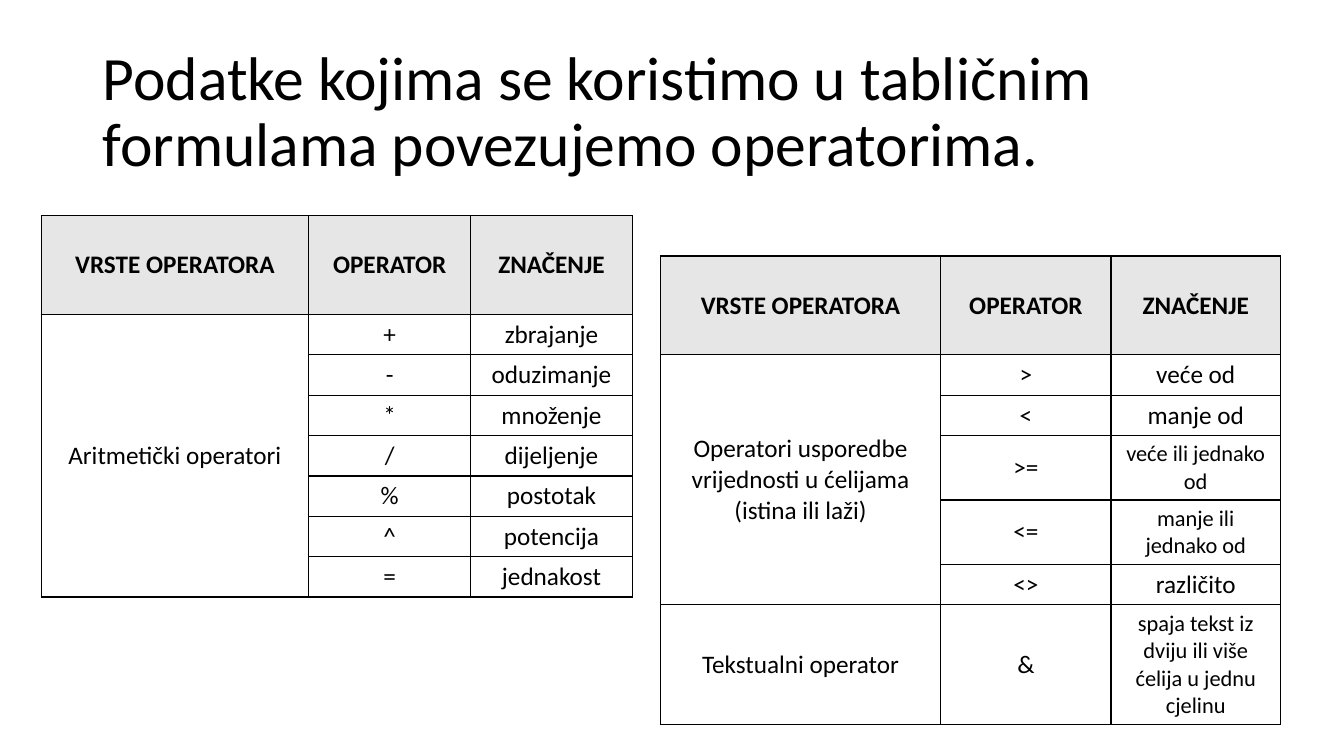
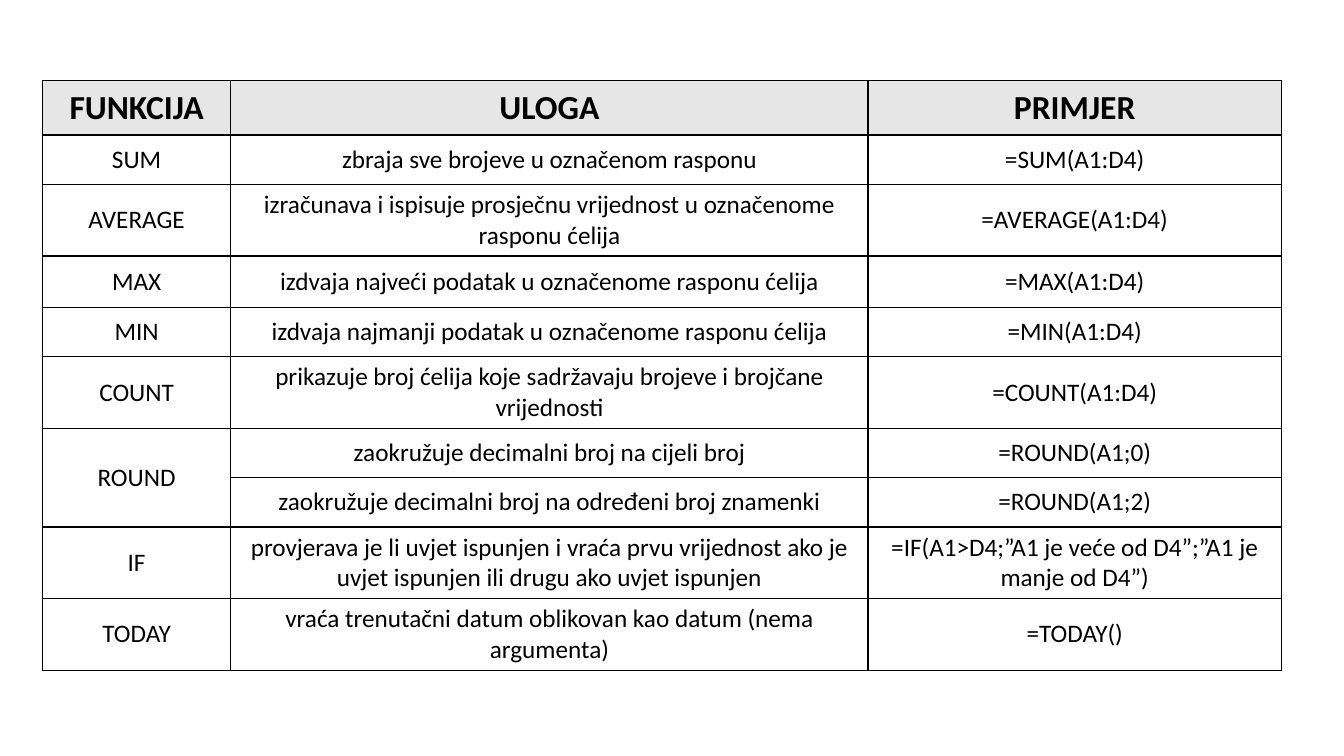
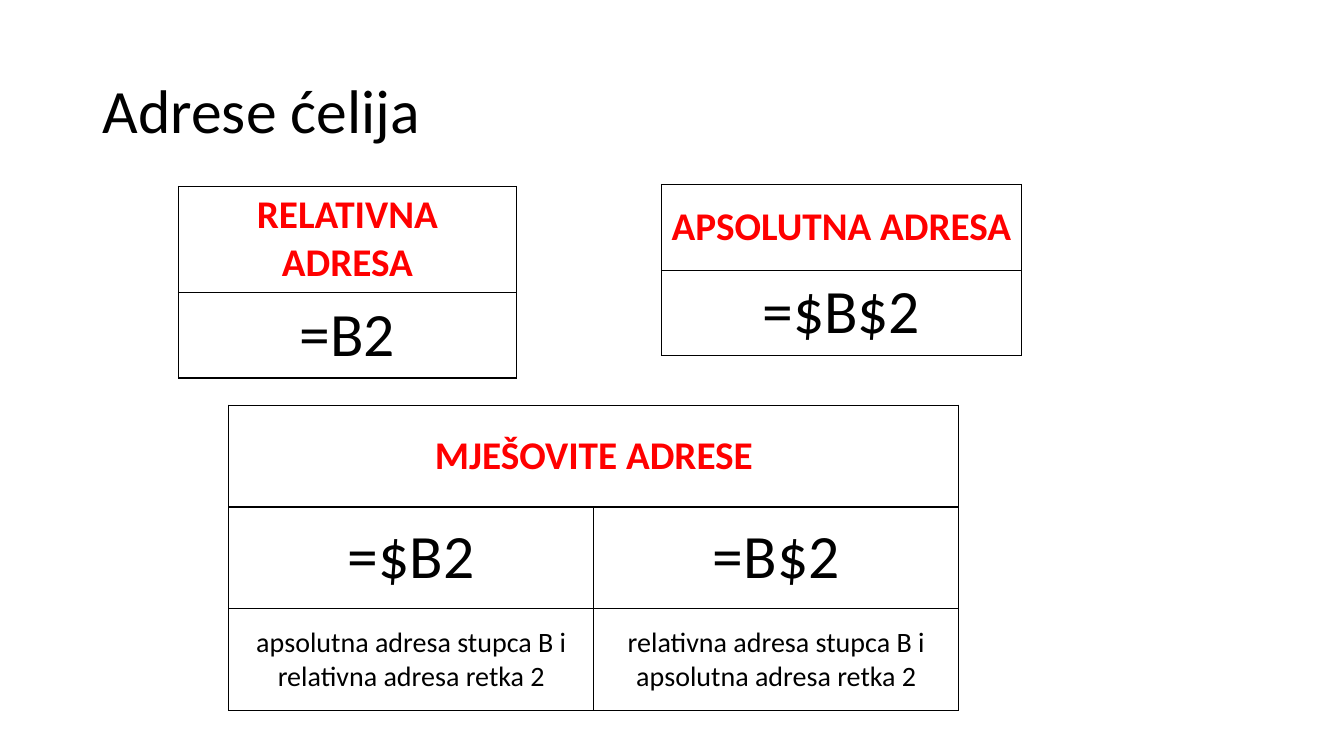
import pptx
import pptx.util
import pptx.dml.color
import pptx.enum.text
import pptx.oxml

Inches = pptx.util.Inches
Pt = pptx.util.Pt
ALIGN = pptx.enum.text.PP_ALIGN
MIDDLE = pptx.enum.text.MSO_ANCHOR.MIDDLE
FONT = "Calibri"
BLACK, RED, GRAY = "000000", "FF0000", "E7E6E6"
NS = "http://schemas.openxmlformats.org/drawingml/2006/main"
HEADS = ["VRSTE OPERATORA", "OPERATOR", "ZNAČENJE"]


def color(code):
    return pptx.dml.color.RGBColor.from_string(code)


def write(frame, text, size=18, tint=BLACK, bold=False, align=ALIGN.CENTER, space=1.0):
    frame.word_wrap = True
    par = frame.paragraphs[0]
    par.alignment = align
    par.line_spacing = space
    run = par.add_run()
    run.text = text
    font = run.font
    font.name, font.size, font.bold = FONT, Pt(size), bold
    font.color.rgb = color(tint)


def title(slide, text):
    box = slide.shapes.add_textbox(Inches(0.92), Inches(0.4), Inches(11.5), Inches(1.45))
    box.text_frame.vertical_anchor = MIDDLE
    write(box.text_frame, text, size=44, align=ALIGN.LEFT, space=0.9)


def border(cell):
    props = cell._tc.get_or_add_tcPr()
    for side in "LRTB":
        props.append(pptx.oxml.parse_xml(
            f'<a:ln{side} xmlns:a="{NS}" w="{Pt(1)}"><a:solidFill>'
            f'<a:srgbClr val="{BLACK}"/></a:solidFill></a:ln{side}>'))


def table(slide, left, top, cols, rows, cells, head, fill=None, spans=(), sizes=None):
    """Draw a ruled table.

    head formats the first row, sizes maps (row, column) to a text size,
    and spans lists the first and last cell of each merged block.
    """
    sizes = sizes or {}
    grid = slide.shapes.add_table(len(rows), len(cols), Inches(left), Inches(top),
                                  Inches(sum(cols)), Inches(sum(rows))).table
    grid.first_row = grid.horz_banding = False
    for col, width in zip(grid.columns, cols):
        col.width = Inches(width)
    for row, height in zip(grid.rows, rows):
        row.height = Inches(height)
    for y, line in enumerate(cells):
        for x, text in enumerate(line):
            cell = grid.cell(y, x)
            border(cell)
            cell.vertical_anchor = MIDDLE
            if fill and y == 0:
                cell.fill.solid()
                cell.fill.fore_color.rgb = color(fill)
            else:
                cell.fill.background()
            if text:
                form = head if y == 0 else {"size": sizes.get((y, x), 18)}
                write(cell.text_frame, text, **form)
    for first, last in spans:
        grid.cell(*first).merge(grid.cell(*last))


def signs(slide):
    title(slide, "Podatke kojima se koristimo u tabličnim formulama povezujemo operatorima.")
    head = {"bold": True}
    table(slide, 0.41, 2.14, [2.65, 1.61, 1.6], [0.98] + [0.4] * 7, [
        HEADS,
        ["Aritmetički operatori", "+", "zbrajanje"],
        [None, "-", "oduzimanje"],
        [None, "*", "množenje"],
        [None, "/", "dijeljenje"],
        [None, "%", "postotak"],
        [None, "^", "potencija"],
        [None, "=", "jednakost"],
    ], head, fill=GRAY, spans=[((1, 0), (7, 0))])
    table(slide, 6.55, 2.54, [2.78, 1.69, 1.68], [0.98, 0.4, 0.4, 0.64, 0.64, 0.4, 1.19], [
        HEADS,
        ["Operatori usporedbe vrijednosti u ćelijama (istina ili laži)", ">", "veće od"],
        [None, "<", "manje od"],
        [None, ">=", "veće ili jednako od"],
        [None, "<=", "manje ili jednako od"],
        [None, "<>", "različito"],
        ["Tekstualni operator", "&", "spaja tekst iz dviju ili više ćelija u jednu cjelinu"],
    ], head, fill=GRAY, spans=[((1, 0), (5, 0))], sizes={(3, 2): 16, (4, 2): 16, (6, 2): 16})


def tasks(slide):
    one, two = 0.49, 0.71
    rows = [0.54, one, two, 0.51, one, two, one, one, two, two]
    table(slide, 0.42, 0.8, [1.87, 6.32, 4.1], rows, [
        ["FUNKCIJA", "ULOGA", "PRIMJER"],
        ["SUM", "zbraja sve brojeve u označenom rasponu", "=SUM(A1:D4)"],
        ["AVERAGE", "izračunava i ispisuje prosječnu vrijednost u označenome rasponu ćelija",
         "=AVERAGE(A1:D4)"],
        ["MAX", "izdvaja najveći podatak u označenome rasponu ćelija", "=MAX(A1:D4)"],
        ["MIN", "izdvaja najmanji podatak u označenome rasponu ćelija", "=MIN(A1:D4)"],
        ["COUNT", "prikazuje broj ćelija koje sadržavaju brojeve i brojčane vrijednosti",
         "=COUNT(A1:D4)"],
        ["ROUND", "zaokružuje decimalni broj na cijeli broj", "=ROUND(A1;0)"],
        [None, "zaokružuje decimalni broj na određeni broj znamenki", "=ROUND(A1;2)"],
        ["IF", "provjerava je li uvjet ispunjen i vraća prvu vrijednost ako je uvjet "
         "ispunjen ili drugu ako uvjet ispunjen",
         "=IF(A1>D4;”A1 je veće od D4”;”A1 je manje od D4”)"],
        ["TODAY", "vraća trenutačni datum oblikovan kao datum (nema argumenta)", "=TODAY()"],
    ], {"size": 24, "bold": True}, fill=GRAY, spans=[((6, 0), (7, 0))])


def places(slide):
    title(slide, "Adrese ćelija")
    head = {"size": 28, "bold": True, "tint": RED}
    table(slide, 1.77, 1.85, [3.35], [1.05, 0.85],
          [["RELATIVNA ADRESA"], ["=B2"]], head, sizes={(1, 0): 44})
    table(slide, 6.56, 1.83, [3.57], [0.85, 0.85],
          [["APSOLUTNA ADRESA"], ["=$B$2"]], head, sizes={(1, 0): 44})
    table(slide, 2.27, 4.02, [3.62] * 2, [1.01] * 3, [
        ["MJEŠOVITE ADRESE", None],
        ["=$B2", "=B$2"],
        ["apsolutna adresa stupca B i relativna adresa retka 2",
         "relativna adresa stupca B i apsolutna adresa retka 2"],
    ], head, spans=[((0, 0), (0, 1))],
        sizes={(1, 0): 44, (1, 1): 44, (2, 0): 20, (2, 1): 20})


def main():
    deck = pptx.Presentation()
    deck.slide_width, deck.slide_height = Inches(13.33), Inches(7.5)
    for build in (signs, tasks, places):
        build(deck.slides.add_slide(deck.slide_layouts[6]))
    deck.save("out.pptx")


if __name__ == "__main__":
    main()
